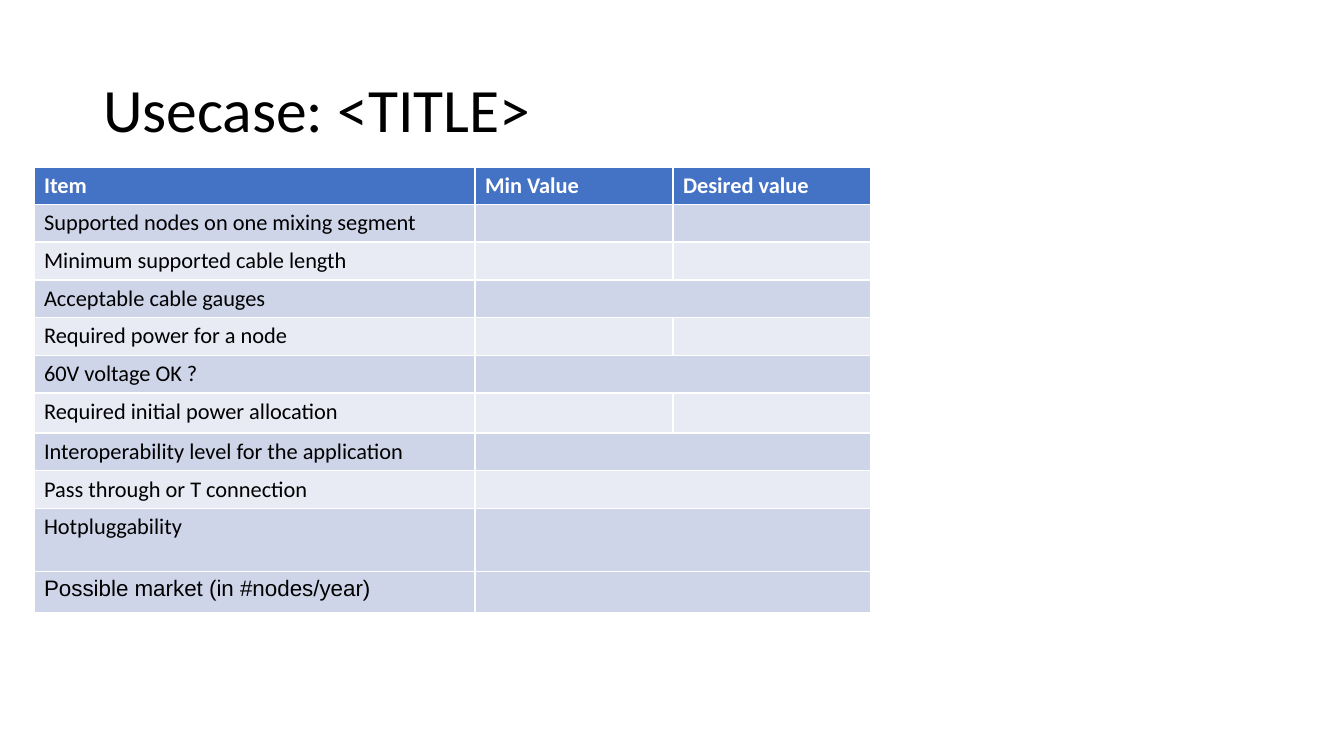
"""Build the use case slide with its table of requirements."""
from dataclasses import dataclass
from pptx import Presentation
from pptx.dml.color import RGBColor as RGB
from pptx.enum.text import MSO_ANCHOR as Anchor, PP_ALIGN as Align
from pptx.util import Inches, Pt

TITLE = "Usecase: <TITLE>"
HEAD = ("Item", "Min Value", "Desired value")
ITEMS = [
    # label, row height in px, one merged value cell
    ("Supported nodes on one mixing segment", 37, False),
    ("Minimum supported cable length", 38, False),
    ("Acceptable cable gauges", 37, True),
    ("Required power for a node", 38, False),
    ("60V voltage OK ?", 37, True),
    ("Required initial power allocation", 40, False),
    ("Interoperability level for the application", 38, True),
    ("Pass through or T connection", 37, True),
    ("Hotpluggability", 63, True),
    ("Possible market (in #nodes/year)", 41, True),
]
HEAD_H = 37
COLS = (441, 198, 198)
SIZE = (1344, 756)
TITLE_BOX = (93, 40, 1159, 146)
TABLE_AT = (34, 167)


@dataclass(frozen=True)
class Theme:
    font: str = "Calibri"
    last_font: str = "Arial"
    title: int = 44
    body: int = 16
    ink: str = "000000"
    paper: str = "FFFFFF"
    head: str = "4472C4"
    bands: tuple = ("CFD5E9", "E8EBF4")


THEME = Theme()


def px(n):
    return round(n * Inches(1) / 100.8)


def style(par, size, color, bold=False, font=THEME.font):
    for run in par.runs:
        run.font.name = font
        run.font.size = Pt(size)
        run.font.bold = bold
        run.font.color.rgb = RGB.from_string(color)


def fill_cell(cell, text, back, color, **look):
    cell.fill.solid()
    cell.fill.fore_color.rgb = RGB.from_string(back)
    cell.text_frame.text = text
    par = cell.text_frame.paragraphs[0]
    style(par, THEME.body, color, **look)
    if not text:
        par._p.get_or_add_endParaRPr().set("sz", str(THEME.body * 100))


def add_title(slide):
    title = slide.shapes.title
    title.left, title.top, title.width, title.height = map(px, TITLE_BOX)
    frame = title.text_frame
    frame.text = TITLE
    frame.vertical_anchor = Anchor.MIDDLE
    par = frame.paragraphs[0]
    par.alignment = Align.LEFT
    par.line_spacing = 0.9
    style(par, THEME.title, THEME.ink)


def add_items(slide):
    highs = [HEAD_H] + [high for _, high, _ in ITEMS]
    box = (*TABLE_AT, sum(COLS), sum(highs))
    table = slide.shapes.add_table(len(highs), len(COLS), *map(px, box)).table
    for col, wide in zip(table.columns, COLS):
        col.width = px(wide)
    for row, high in zip(table.rows, highs):
        row.height = px(high)
    for c, text in enumerate(HEAD):
        fill_cell(table.cell(0, c), text, THEME.head, THEME.paper, bold=True)
    last = len(ITEMS) - 1
    for i, (label, _, merged) in enumerate(ITEMS):
        band = THEME.bands[0 if i == last else i % 2]
        font = THEME.last_font if i == last else THEME.font
        for c, text in enumerate((label, "", "")):
            fill_cell(table.cell(i + 1, c), text, band, THEME.ink, font=font)
        if merged:
            table.cell(i + 1, 1).merge(table.cell(i + 1, 2))


def main():
    deck = Presentation()
    deck.slide_width, deck.slide_height = map(px, SIZE)
    slide = deck.slides.add_slide(deck.slide_layouts[5])
    add_title(slide)
    add_items(slide)
    deck.save("out.pptx")


if __name__ == "__main__":
    main()
